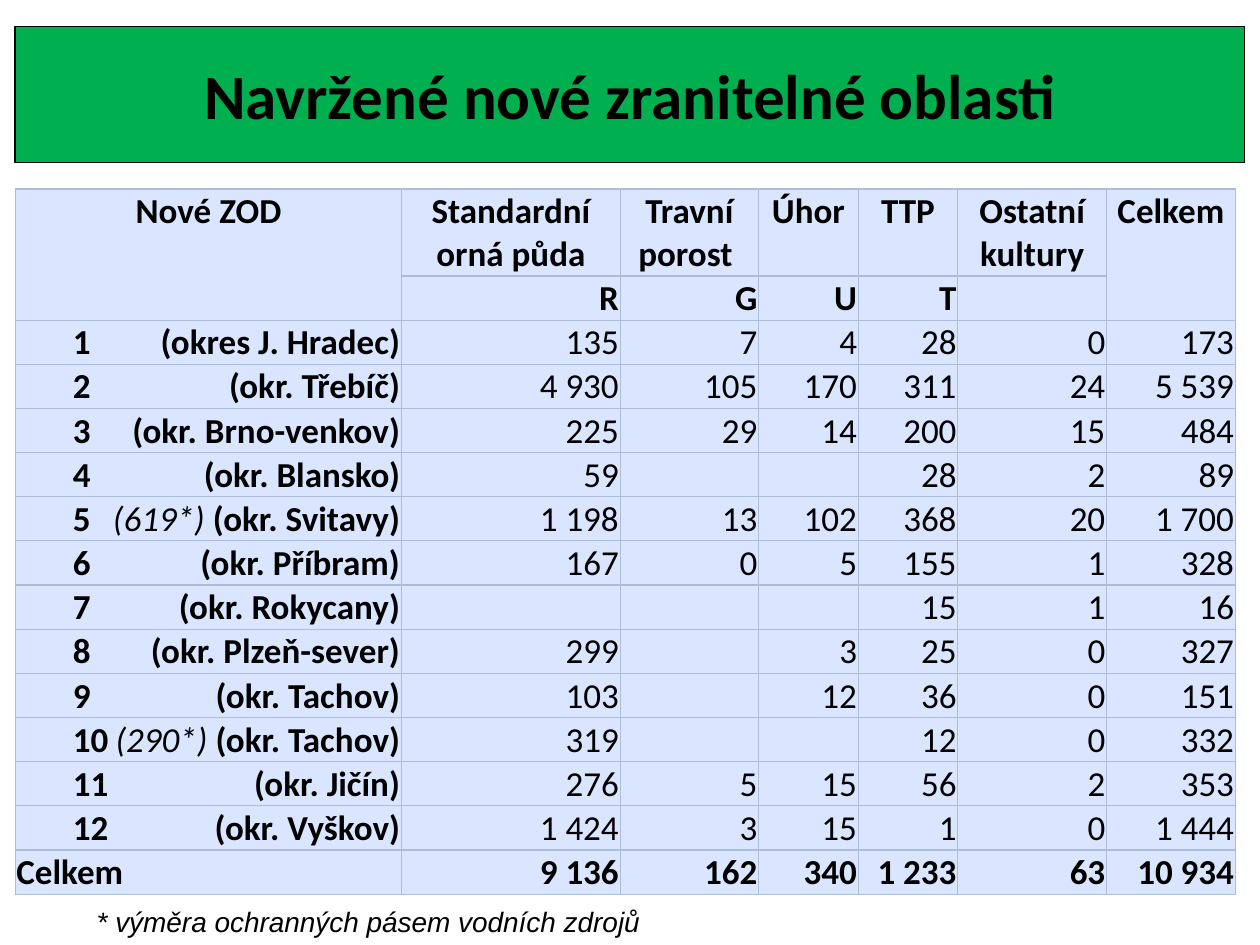
import lxml.etree
import pptx
import pptx.dml.color
import pptx.enum.text
import pptx.oxml.ns
import pptx.util

Pt = pptx.util.Pt
ALIGN = pptx.enum.text.PP_ALIGN
ANCHOR = pptx.enum.text.MSO_ANCHOR

BLACK, GREEN, PALE_BLUE, BORDER_BLUE = "000000", "00B050", "DAE6FF", "ADBCD7"
LEFT = 8.64
COLUMN_WIDTHS = [221, 124.7, 79.2, 56.9, 56.9, 85, 73.6]
HEADER_HEIGHT, ROW_HEIGHT = 49.7, 25.2
NAME_INDENT, CELL_INSET = 33, 0.72

HEADERS = ["Nové ZOD", "Standardní orná půda", "Travní porost ", "Úhor", "TTP",
           "Ostatní kultury", "Celkem"]
CODES = ["", "R", "G", "U", "T", "", ""]
AREAS = [
    ("1", "", "(okres J. Hradec)", ["135", "7", "4", "28", "0", "173"]),
    ("2", "", "(okr. Třebíč)", ["4 930", "105", "170", "311", "24", "5 539"]),
    ("3", "", "(okr. Brno-venkov)", ["225", "29", "14", "200", "15", "484"]),
    ("4", "", "(okr. Blansko)", ["59", "", "", "28", "2", "89"]),
    ("5", "(619*) ", "(okr. Svitavy)", ["1 198", "13", "102", "368", "20", "1 700"]),
    ("6", "", "(okr. Příbram)", ["167", "0", "5", "155", "1", "328"]),
    ("7", "", "(okr. Rokycany)", ["", "", "", "15", "1", "16"]),
    ("8", "", "(okr. Plzeň-sever)", ["299", "", "3", "25", "0", "327"]),
    ("9", "", "(okr. Tachov)", ["103", "", "12", "36", "0", "151"]),
    ("10", "(290*) ", "(okr. Tachov)", ["319", "", "", "12", "0", "332"]),
    ("11", "", "(okr. Jičín)", ["276", "5", "15", "56", "2", "353"]),
    ("12", "", "(okr. Vyškov)", ["1 424", "3", "15", "1", "0", "1 444"]),
]
TOTALS = ["9 136", "162", "340", "1 233", "63", "10 934"]


def color(value):
    return pptx.dml.color.RGBColor.from_string(value)


def format_font(font, name, size, bold=False, italic=False):
    font.name = name
    font.size = Pt(size)
    font.bold = bold
    font.italic = italic
    font.color.rgb = color(BLACK)


def add_element(parent, tag, **attributes):
    return lxml.etree.SubElement(parent, pptx.oxml.ns.qn(tag), attributes)


def add_title(slide, text):
    title = slide.shapes.title
    title.left, title.top, title.width, title.height = Pt(LEFT), Pt(15.1), Pt(702.7), Pt(77.8)
    title.fill.solid()
    title.fill.fore_color.rgb = color(GREEN)
    title.line.color.rgb = color(BLACK)
    title.line.width = Pt(0.75)
    title.text_frame.text = text
    title.text_frame.vertical_anchor = ANCHOR.MIDDLE
    paragraph = title.text_frame.paragraphs[0]
    paragraph.alignment = ALIGN.CENTER
    format_font(paragraph.font, "Calibri", 36, bold=True)


def format_cell(cell, anchor):
    cell.margin_left = cell.margin_right = cell.margin_top = Pt(CELL_INSET)
    cell.margin_bottom = 0
    cell.vertical_anchor = anchor
    properties = cell._tc.get_or_add_tcPr()
    for side in ("a:lnL", "a:lnR", "a:lnT", "a:lnB"):
        line = add_element(properties, side, w=str(Pt(0.75)))
        add_element(add_element(line, "a:solidFill"), "a:srgbClr", val=BORDER_BLUE)
    cell.fill.solid()
    cell.fill.fore_color.rgb = color(PALE_BLUE)


def fill_cell(cell, text, alignment, bold, anchor=ANCHOR.BOTTOM):
    format_cell(cell, anchor)
    cell.text = text
    paragraph = cell.text_frame.paragraphs[0]
    paragraph.alignment = alignment
    format_font(paragraph.font, "Calibri", 20, bold)


def fill_area_cell(cell, number, note, district):
    format_cell(cell, ANCHOR.BOTTOM)
    cell.margin_left = Pt(NAME_INDENT)
    paragraph = cell.text_frame.paragraphs[0]
    paragraph.alignment = ALIGN.LEFT
    tabs = add_element(paragraph._p.get_or_add_pPr(), "a:tabLst")
    position = Pt(COLUMN_WIDTHS[0] - NAME_INDENT - 1)
    add_element(tabs, "a:tab", pos=str(position), algn="r")
    for text, is_note in ((number + "\t", False), (note, True), (district, False)):
        if text:
            run = paragraph.add_run()
            run.text = text
            format_font(run.font, "Calibri", 20, bold=not is_note, italic=is_note)


def fill_row(table, row, texts, alignment, bold, anchor=ANCHOR.BOTTOM, first=0):
    for column, text in enumerate(texts, first):
        fill_cell(table.cell(row, column), text, alignment, bold, anchor)


def add_area_table(slide):
    row_count = len(AREAS) + 3
    height = HEADER_HEIGHT + ROW_HEIGHT * (row_count - 1)
    frame = slide.shapes.add_table(row_count, len(COLUMN_WIDTHS), Pt(LEFT), Pt(108),
                                   Pt(sum(COLUMN_WIDTHS)), Pt(height))
    table = frame.table
    table.first_row = table.horz_banding = False
    for column, width in zip(table.columns, COLUMN_WIDTHS):
        column.width = Pt(width)
    for row in table.rows:
        row.height = Pt(ROW_HEIGHT)
    table.rows[0].height = Pt(HEADER_HEIGHT)

    fill_row(table, 0, HEADERS, ALIGN.CENTER, True, ANCHOR.TOP)
    fill_row(table, 1, CODES, ALIGN.RIGHT, True)
    for column in (0, len(COLUMN_WIDTHS) - 1):
        table.cell(0, column).merge(table.cell(1, column))
    for row, (number, note, district, values) in enumerate(AREAS, 2):
        fill_area_cell(table.cell(row, 0), number, note, district)
        fill_row(table, row, values, ALIGN.RIGHT, False, first=1)
    fill_cell(table.cell(row_count - 1, 0), "Celkem", ALIGN.LEFT, True)
    fill_row(table, row_count - 1, TOTALS, ALIGN.RIGHT, True, first=1)


def add_footnote(slide, text):
    box = slide.shapes.add_textbox(Pt(48.2), Pt(513.4), Pt(355.7), Pt(26.6))
    box.text_frame.word_wrap = True
    box.text_frame.text = text
    format_font(box.text_frame.paragraphs[0].font, "Arial", 16, italic=True)


def main():
    presentation = pptx.Presentation()
    presentation.slide_width, presentation.slide_height = Pt(720), Pt(540)
    slide = presentation.slides.add_slide(presentation.slide_layouts[5])
    add_title(slide, "Navržené nové zranitelné oblasti")
    add_area_table(slide)
    add_footnote(slide, "* výměra ochranných pásem vodních zdrojů")
    presentation.save("out.pptx")


if __name__ == "__main__":
    main()
